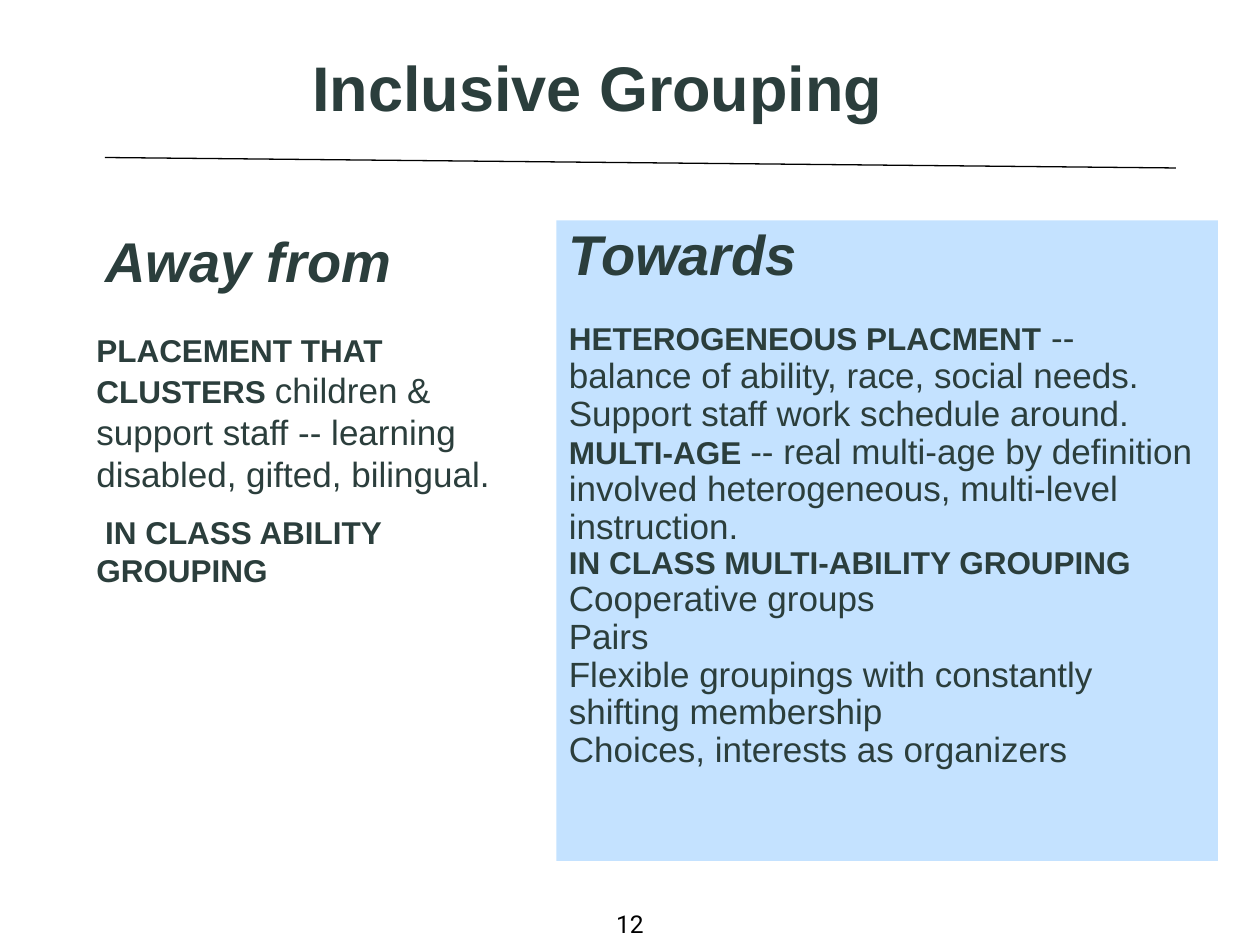
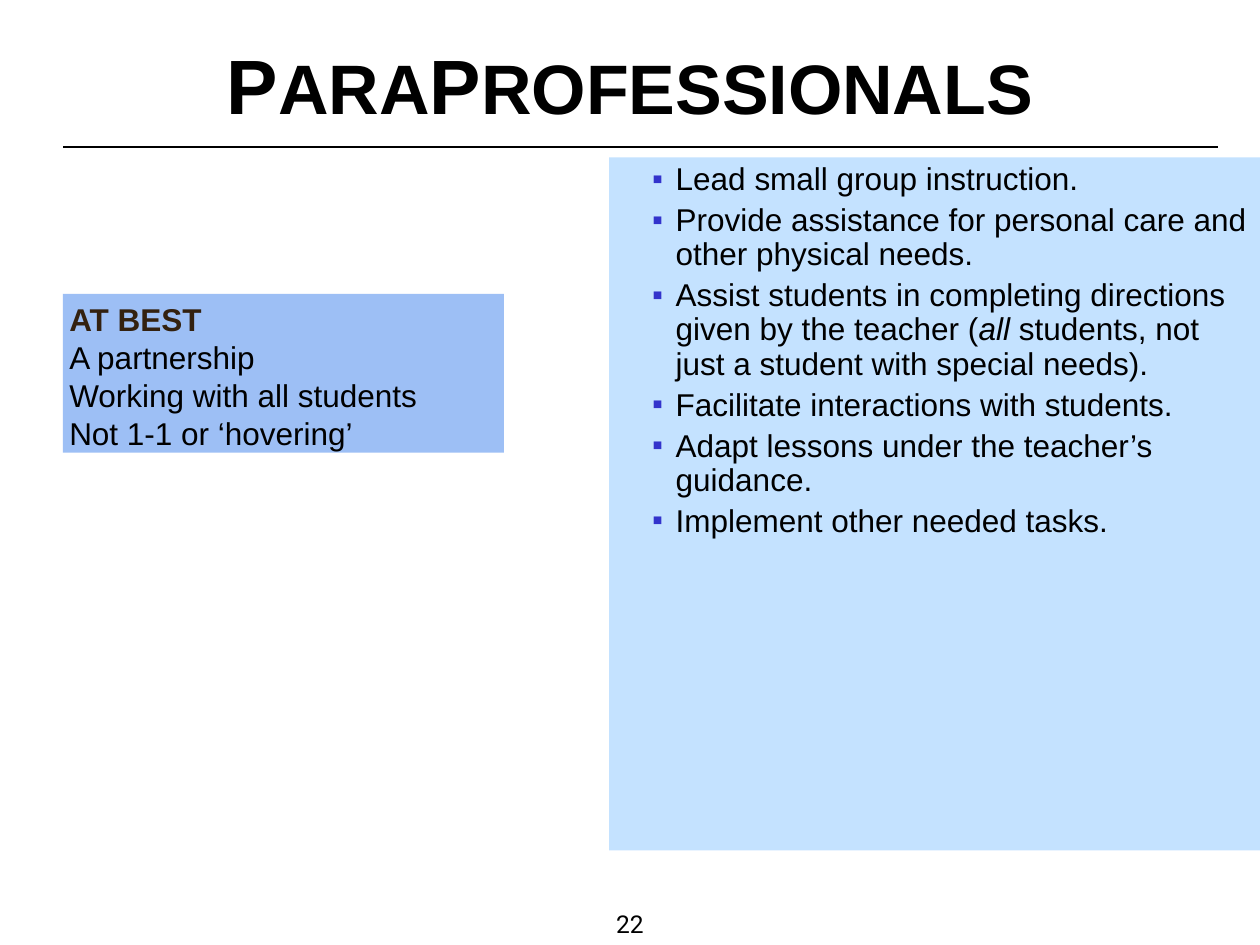
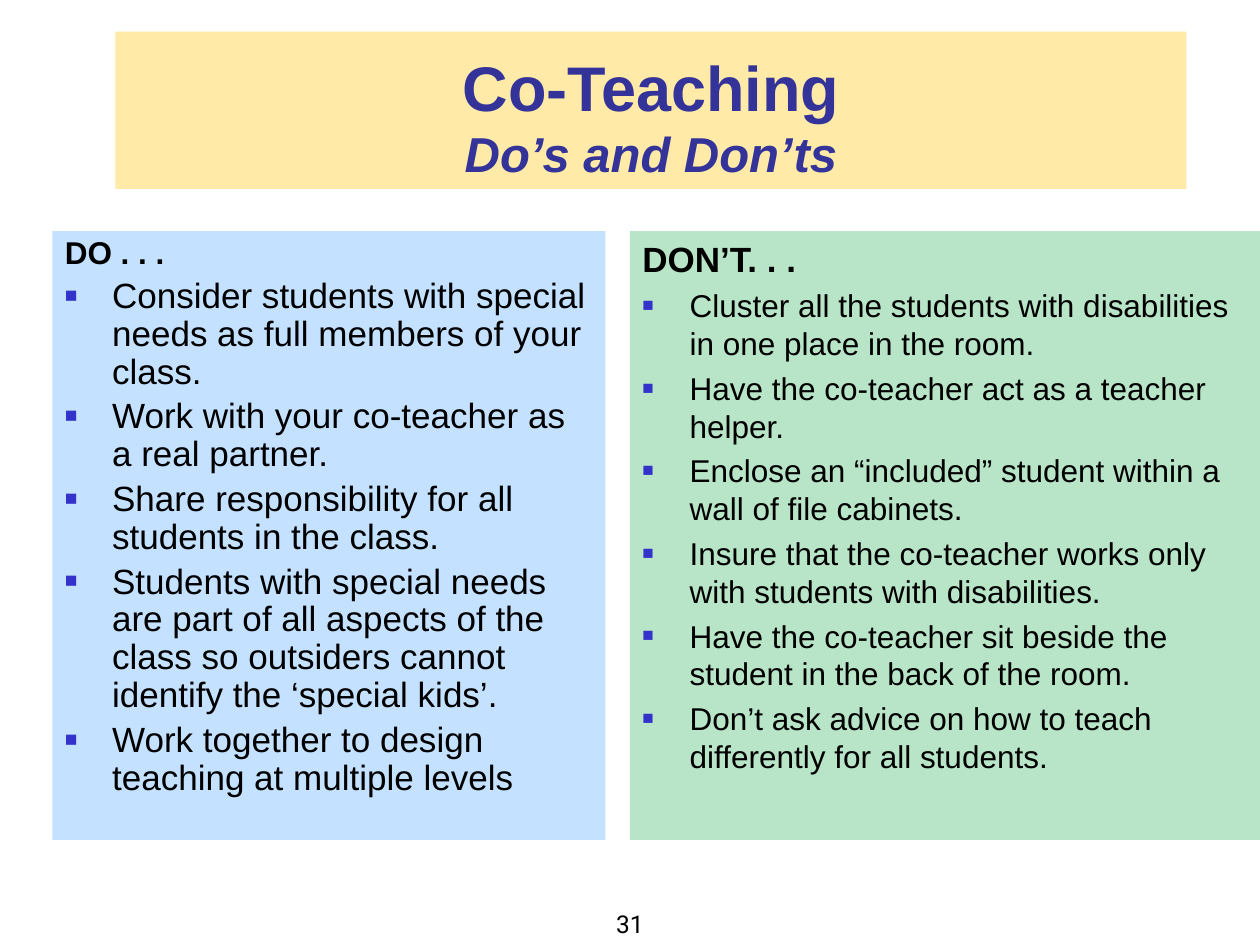
"""Build three slides on inclusive grouping, paraprofessionals and co-teaching."""
from dataclasses import dataclass

from lxml import etree
from pptx import Presentation
from pptx.dml.color import RGBColor
from pptx.enum.shapes import MSO_CONNECTOR, MSO_SHAPE
from pptx.enum.text import MSO_ANCHOR, PP_ALIGN
from pptx.oxml.ns import qn
from pptx.util import Pt

LEFT, CENTER = PP_ALIGN.LEFT, PP_ALIGN.CENTER
TOP, BOTTOM = MSO_ANCHOR.TOP, MSO_ANCHOR.BOTTOM
RECTANGLE, STRAIGHT = MSO_SHAPE.RECTANGLE, MSO_CONNECTOR.STRAIGHT

BLACK = RGBColor(0x00, 0x00, 0x00)
WHITE = RGBColor(0xFF, 0xFF, 0xFF)
DARK_GREEN = RGBColor(0x2B, 0x3E, 0x3C)
BROWN = RGBColor(0x33, 0x21, 0x10)
NAVY = RGBColor(0x33, 0x33, 0x99)
BULLET_BLUE = RGBColor(0x33, 0x33, 0xCC)
PALE_BLUE = RGBColor(0xC4, 0xE2, 0xFF)
MID_BLUE = RGBColor(0x9D, 0xBF, 0xF5)
YELLOW = RGBColor(0xFF, 0xEB, 0xA7)
PALE_GREEN = RGBColor(0xB8, 0xE4, 0xC7)

BODY_FONT, NUMBER_FONT = "Arial", "Roboto"
INSET = 3.6
PANEL_INSET = 2 * INSET


@dataclass(frozen=True)
class Run:
    """A stretch of text in one format."""
    text: str
    size: float = 20
    bold: bool = False
    italic: bool = False
    color: RGBColor | None = None


@dataclass(frozen=True)
class Line:
    """A paragraph made of runs."""
    runs: tuple[Run, ...]
    before: float = 0
    margin: float = 0
    indent: float = 0
    bullet_percent: int = 0


@dataclass(frozen=True)
class Box:
    """A place on the slide in points."""
    left: float
    top: float
    width: float
    height: float

    def lengths(self) -> tuple[Pt, ...]:
        """Return the four lengths."""
        return Pt(self.left), Pt(self.top), Pt(self.width), Pt(self.height)


def line(text: str, *, size=20, bold=False, italic=False, color=None, **layout) -> Line:
    """Return a paragraph with a single run."""
    return Line((Run(text, size, bold, italic, color),), **layout)


def bullet_lines(items, *, size, percent, margin, indent) -> list[Line]:
    """Return one bulleted paragraph for each item, a text or a tuple of runs."""
    return [Line(item if isinstance(item, tuple) else (Run(item, size),),
                 before=4, margin=margin, indent=indent, bullet_percent=percent)
            for item in items]


def add_bullet(properties, percent: int) -> None:
    """Give paragraph properties a blue square bullet."""
    color = etree.SubElement(properties, qn("a:buClr"))
    etree.SubElement(color, qn("a:srgbClr"), val=str(BULLET_BLUE))
    etree.SubElement(properties, qn("a:buSzPct"), val=str(percent * 1000))
    etree.SubElement(properties, qn("a:buFont"), typeface=BODY_FONT)
    etree.SubElement(properties, qn("a:buChar"), char="■")


def write_text(shape, lines, *, font=BODY_FONT, color=BLACK, align=LEFT, anchor=TOP,
               inset=INSET, spacing=1.0, wrap=True) -> None:
    """Write paragraphs into a shape."""
    frame = shape.text_frame
    frame.word_wrap, frame.vertical_anchor = wrap, anchor
    frame.margin_left = frame.margin_right = Pt(inset)
    frame.margin_top = frame.margin_bottom = Pt(INSET)
    for index, item in enumerate(lines):
        paragraph = frame.add_paragraph() if index else frame.paragraphs[0]
        paragraph.alignment, paragraph.line_spacing = align, spacing
        paragraph.space_before = Pt(item.before if index else 0)
        properties = paragraph._p.get_or_add_pPr()
        properties.set("marL", str(Pt(item.margin)))
        properties.set("indent", str(Pt(item.indent)))
        if item.bullet_percent:
            add_bullet(properties, item.bullet_percent)
        for piece in item.runs:
            run = paragraph.add_run()
            run.text = piece.text
            run.font.name, run.font.size = font, Pt(piece.size)
            run.font.bold, run.font.italic = piece.bold, piece.italic
            run.font.color.rgb = piece.color or color


def add_text(slide, box: Box, lines, **text_format) -> None:
    """Add a text box."""
    write_text(slide.shapes.add_textbox(*box.lengths()), lines, **text_format)


def add_panel(slide, box: Box, fill: RGBColor, lines, *, inset=PANEL_INSET,
              **text_format) -> None:
    """Add a filled rectangle holding text."""
    panel = slide.shapes.add_shape(RECTANGLE, *box.lengths())
    panel.shadow.inherit = False
    panel.fill.solid()
    panel.fill.fore_color.rgb = fill
    panel.line.fill.background()
    write_text(panel, lines, inset=inset, **text_format)


def add_rule(slide, left: float, top: float, right: float, bottom: float) -> None:
    """Add the thin line under a title."""
    rule = slide.shapes.add_connector(STRAIGHT, Pt(left), Pt(top), Pt(right), Pt(bottom))
    rule.line.color.rgb, rule.line.width = BLACK, Pt(0.75)
    etree.SubElement(rule._element.spPr, qn("a:effectLst"))


def add_numbered_slide(presentation, number: int):
    """Add a blank slide with its number at the foot."""
    slide = presentation.slides.add_slide(presentation.slide_layouts[6])
    add_text(slide, Box(348, 515.5, 24, 24.5), [line(str(number), size=14)],
             font=NUMBER_FONT, align=CENTER, anchor=BOTTOM, wrap=False)
    return slide


def build_grouping(presentation) -> None:
    """Build the inclusive grouping slide."""
    slide = add_numbered_slide(presentation, 12)
    towards = [
        line("Towards", size=32, bold=True, italic=True),
        Line((Run("HETEROGENEOUS PLACMENT", 18, True),
              Run(" -- balance of ability, race, social needs. "
                  "Support staff work schedule around.")), before=19),
        Line((Run("MULTI-AGE ", 18, True),
              Run("-- real multi-age by definition involved heterogeneous, "
                  "multi-level instruction."))),
        line("IN CLASS MULTI-ABILITY GROUPING", size=18, bold=True),
        *(line(text) for text in (
            "Cooperative groups", "Pairs",
            "Flexible groupings with constantly shifting membership",
            "Choices, interests as organizers")),
    ]
    away = [
        line("Away from", size=32, bold=True, italic=True, indent=5),
        Line((Run("PLACEMENT THAT CLUSTERS ", 18, True),
              Run("children & support staff -- learning disabled, gifted, bilingual.")),
             before=21),
        line("IN CLASS ABILITY GROUPING", size=18, bold=True, before=10.5, indent=5),
    ]
    add_panel(slide, Box(318, 126, 378, 366), PALE_BLUE, towards,
              color=DARK_GREEN, spacing=0.9)
    add_text(slide, Box(117, 24, 449, 48),
             [line("Inclusive Grouping", size=36, bold=True)],
             color=DARK_GREEN, align=CENTER)
    add_panel(slide, Box(48, 126, 258, 306), WHITE, away, color=DARK_GREEN)
    add_rule(slide, 60, 90, 672, 96)


def build_paraprofessionals(presentation) -> None:
    """Build the paraprofessionals slide."""
    slide = add_numbered_slide(presentation, 22)
    title = tuple(Run(text, size, True) for text, size in (
        ("P", 44), ("ARA", 40), ("P", 44), ("ROFESSIONALS", 40)))
    tasks = (
        "Lead small group instruction.",
        "Provide assistance for personal care and other physical needs.",
        (Run("Assist students in completing directions given by the teacher (", 18),
         Run("all", 18, italic=True),
         Run(" students, not just a student with special needs).", 18)),
        "Facilitate interactions with students.",
        "Adapt lessons under the teacher’s guidance.",
        "Implement other needed tasks.",
    )
    partnership = [
        line("AT BEST", size=18, bold=True, color=BROWN),
        *(line(text, size=18) for text in (
            "A partnership", "Working with all students", "Not 1-1 or ‘hovering’")),
    ]
    add_text(slide, Box(57.6, 22.3, 604.8, 55.4), [Line(title)],
             align=CENTER, anchor=BOTTOM)
    add_panel(slide, Box(348, 90, 372, 396), PALE_BLUE,
              bullet_lines(tasks, size=18, percent=50, margin=31, indent=-13),
              spacing=0.9)
    add_panel(slide, Box(36, 168, 252, 90.7), MID_BLUE, partnership, inset=INSET)
    add_rule(slide, 36, 84, 696, 84)


def build_co_teaching(presentation) -> None:
    """Build the co-teaching slide."""
    slide = add_numbered_slide(presentation, 31)
    hanging = {"margin": 27, "indent": -27}
    dos = (
        "Consider students with special needs as full members of your class.",
        "Work with your co-teacher as a real partner.",
        "Share responsibility for all students in the class.",
        "Students with special needs are part of all aspects of the class so "
        "outsiders cannot identify the ‘special kids’.",
        "Work together to design teaching at multiple levels",
    )
    donts = (
        "Cluster all the students with disabilities in one place in the room.",
        "Have the co-teacher act as a teacher helper.",
        "Enclose an “included” student within a wall of file cabinets.",
        "Insure that the co-teacher works only with students with disabilities.",
        "Have the co-teacher sit beside the student in the back of the room.",
        "Don’t ask advice on how to teach differently for all students.",
    )
    add_panel(slide, Box(66, 18, 612, 90), YELLOW,
              [line("Co-Teaching", size=36, bold=True),
               line("Do’s and Don’ts", size=28, bold=True, italic=True)],
              color=NAVY, align=CENTER, anchor=BOTTOM)
    add_panel(slide, Box(30, 132, 316, 348), PALE_BLUE,
              [line("DO . . .", size=18, bold=True, **hanging),
               *bullet_lines(dos, size=20, percent=60, **hanging)], spacing=0.9)
    add_panel(slide, Box(360, 132, 360, 348), PALE_GREEN,
              [line("DON’T. . .", size=20, bold=True, **hanging),
               *bullet_lines(donts, size=18, percent=60, **hanging)])


def main() -> None:
    """Build and save the presentation."""
    presentation = Presentation()
    presentation.slide_width, presentation.slide_height = Pt(720), Pt(540)
    build_grouping(presentation)
    build_paraprofessionals(presentation)
    build_co_teaching(presentation)
    presentation.save("out.pptx")


if __name__ == "__main__":
    main()
